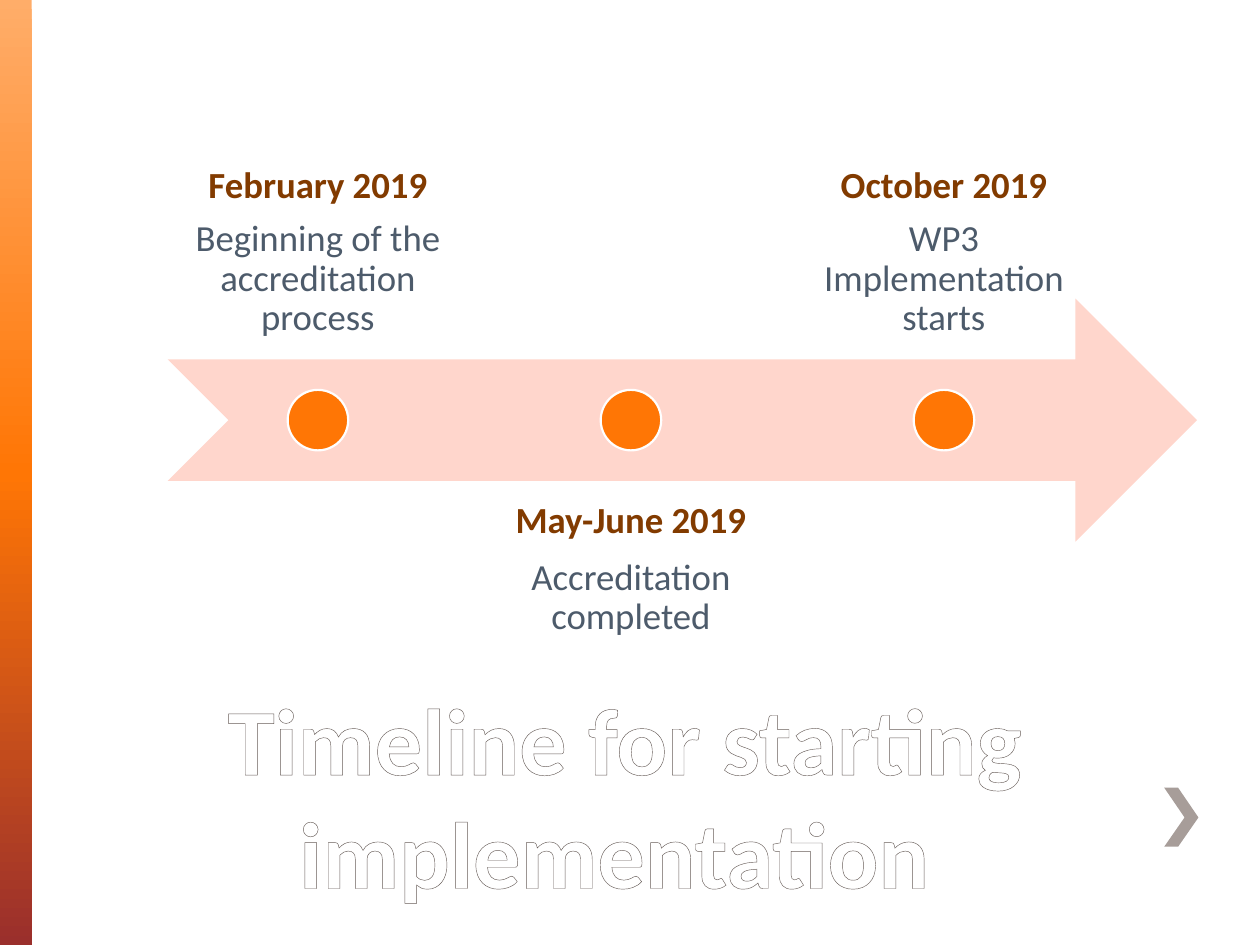
"""Builds a timeline slide with three milestones along a notched arrow."""
import pptx
import pptx.dml.color
import pptx.enum.shapes
import pptx.enum.text
import pptx.oxml
import pptx.oxml.ns
import pptx.util
from lxml import etree

Cm, Pt = pptx.util.Cm, pptx.util.Pt
SHAPE = pptx.enum.shapes.MSO_SHAPE
ANCHOR = pptx.enum.text.MSO_ANCHOR
qn = pptx.oxml.ns.qn

COLORS = {
    "white": "FFFFFF", "peach": "FFAD69", "orange": "FF7605", "red": "9A2F2C",
    "arrow": "FFD6CC", "chevron": "A79D99", "date": "823B00", "detail": "4D5B6B",
    "outline": "675D59",
}
FIRST_CENTER, STEP, AXIS = 6.41, 6.31, 8.47
LABEL_WIDTH, LABEL_HEIGHT, LABEL_INSET = 6.02, 4.9, 0.41
ABOVE_TOP, BELOW_TOP = 2.34, 9.7
DOT_SIZE = 1.22

MILESTONES = [
    ("above", "February 2019", ["Beginning of the accreditation process"]),
    ("below", "May-June 2019", ["Accreditation", "completed"]),
    ("above", "October 2019", ["WP3 Implementation starts"]),
]


def rgb(name):
    return pptx.dml.color.RGBColor.from_string(COLORS[name])


def write(paragraph, text, *, color, size=21, bold=False, spacing=None, after=None):
    paragraph.alignment = pptx.enum.text.PP_ALIGN.CENTER
    paragraph.line_spacing = spacing
    paragraph.space_after = None if after is None else Pt(after)
    run = paragraph.add_run()
    run.text = text
    run.font.name = "Calibri"
    run.font.size = Pt(size)
    run.font.bold = bold
    run.font.color.rgb = rgb(color)
    return run


class TimelineSlide:
    def __init__(self, slide):
        self.slide = slide

    def style(self, shape, fill, line=None):
        shape.shadow.inherit = False
        shape.fill.solid()
        shape.fill.fore_color.rgb = rgb(fill)
        if line:
            shape.line.color.rgb = rgb(line)
            shape.line.width = Pt(1.25)
        else:
            shape.line.fill.background()

    def shape(self, kind, left, top, width, height, fill, line=None):
        shape = self.slide.shapes.add_shape(kind, Cm(left), Cm(top), Cm(width), Cm(height))
        self.style(shape, fill, line)
        return shape

    def gradient_bar(self, width, height, stops):
        bar = self.shape(SHAPE.RECTANGLE, 0, 0, width, height, stops[0][1])
        bar.fill.gradient()
        bar.fill.gradient_angle = 270
        stop_list = bar.element.spPr.find(".//" + qn("a:gsLst"))
        for stop in list(stop_list):
            stop_list.remove(stop)
        for percent, color in stops:
            stop = etree.SubElement(stop_list, qn("a:gs"), pos=str(percent * 1000))
            etree.SubElement(stop, qn("a:srgbClr"), val=COLORS[color])

    def outline(self, points, fill):
        corners = [(Cm(x), Cm(y)) for x, y in points]
        builder = self.slide.shapes.build_freeform(*corners[0])
        builder.add_line_segments(corners[1:], close=True)
        self.style(builder.convert_to_shape(), fill)

    def title(self, text, left, top, width, height):
        title = self.slide.shapes.title
        title.left, title.top, title.width, title.height = map(Cm, (left, top, width, height))
        frame = title.text_frame
        frame.auto_size = pptx.enum.text.MSO_AUTO_SIZE.NONE
        frame.vertical_anchor = ANCHOR.BOTTOM
        run = write(frame.paragraphs[0], text, color="white", size=54, bold=True)
        line = etree.Element(qn("a:ln"), w=str(Pt(1)))
        fill = etree.SubElement(line, qn("a:solidFill"))
        etree.SubElement(fill, qn("a:srgbClr"), val=COLORS["outline"])
        run.font._element.insert(0, line)

    def label(self, center, side, date, details):
        top = ABOVE_TOP if side == "above" else BELOW_TOP
        box = self.slide.shapes.add_textbox(
            Cm(center - LABEL_WIDTH / 2), Cm(top), Cm(LABEL_WIDTH), Cm(LABEL_HEIGHT))
        frame = box.text_frame
        frame.word_wrap = True
        frame.vertical_anchor = ANCHOR.BOTTOM if side == "above" else ANCHOR.TOP
        frame.margin_left = frame.margin_right = Cm(LABEL_INSET)
        frame.margin_top = frame.margin_bottom = Cm(LABEL_INSET)
        tight = {"spacing": 0.9, "after": 7.35}
        write(frame.paragraphs[0], date, color="date", bold=True, **tight)
        for detail in details[:-1]:
            write(frame.add_paragraph(), detail, color="detail")
        write(frame.add_paragraph(), details[-1], color="detail", **tight)

    def dot(self, center):
        self.shape(SHAPE.OVAL, center - DOT_SIZE / 2, AXIS - DOT_SIZE / 2,
                   DOT_SIZE, DOT_SIZE, "orange", "white")


def main():
    deck = pptx.Presentation()
    deck.slide_width, deck.slide_height = Cm(25.4), Cm(19.05)
    timeline = TimelineSlide(deck.slides.add_slide(deck.slide_layouts[5]))

    timeline.gradient_bar(0.64, 19.05, [(0, "peach"), (50, "orange"), (100, "red")])
    timeline.outline([(23.75, 15.88), (23.47, 15.88), (23.88, 16.48), (23.47, 17.07),
                      (23.75, 17.07), (24.16, 16.48)], "chevron")
    timeline.title("Timeline for starting implementation ", 1.7, 13.97, 21.8, 4.45)
    timeline.shape(SHAPE.NOTCHED_RIGHT_ARROW, 3.38, AXIS - 2.45, 20.75, 4.9, "arrow")
    for index, (side, date, details) in enumerate(MILESTONES):
        center = FIRST_CENTER + index * STEP
        timeline.label(center, side, date, details)
        timeline.dot(center)

    deck.save("out.pptx")


if __name__ == "__main__":
    main()
